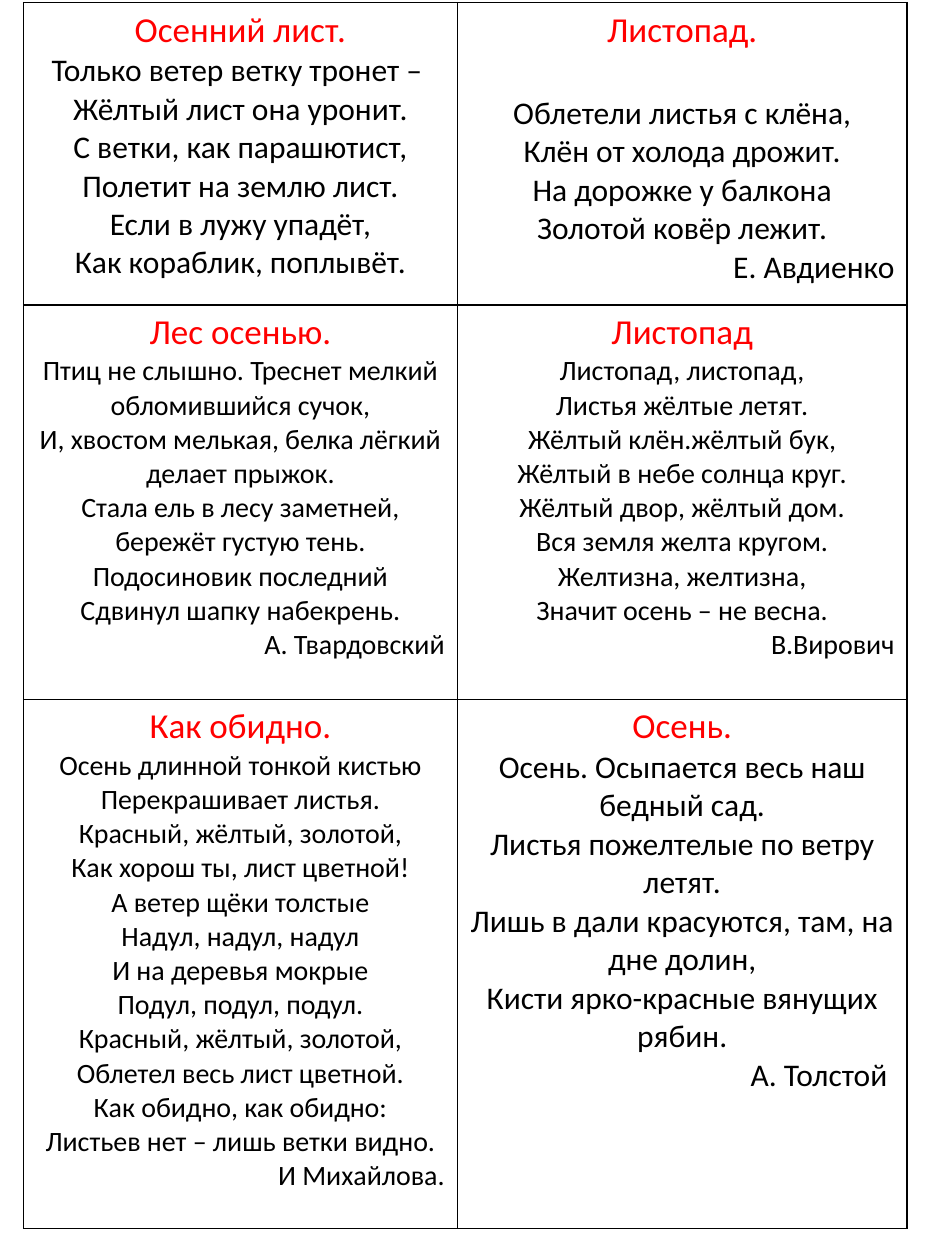
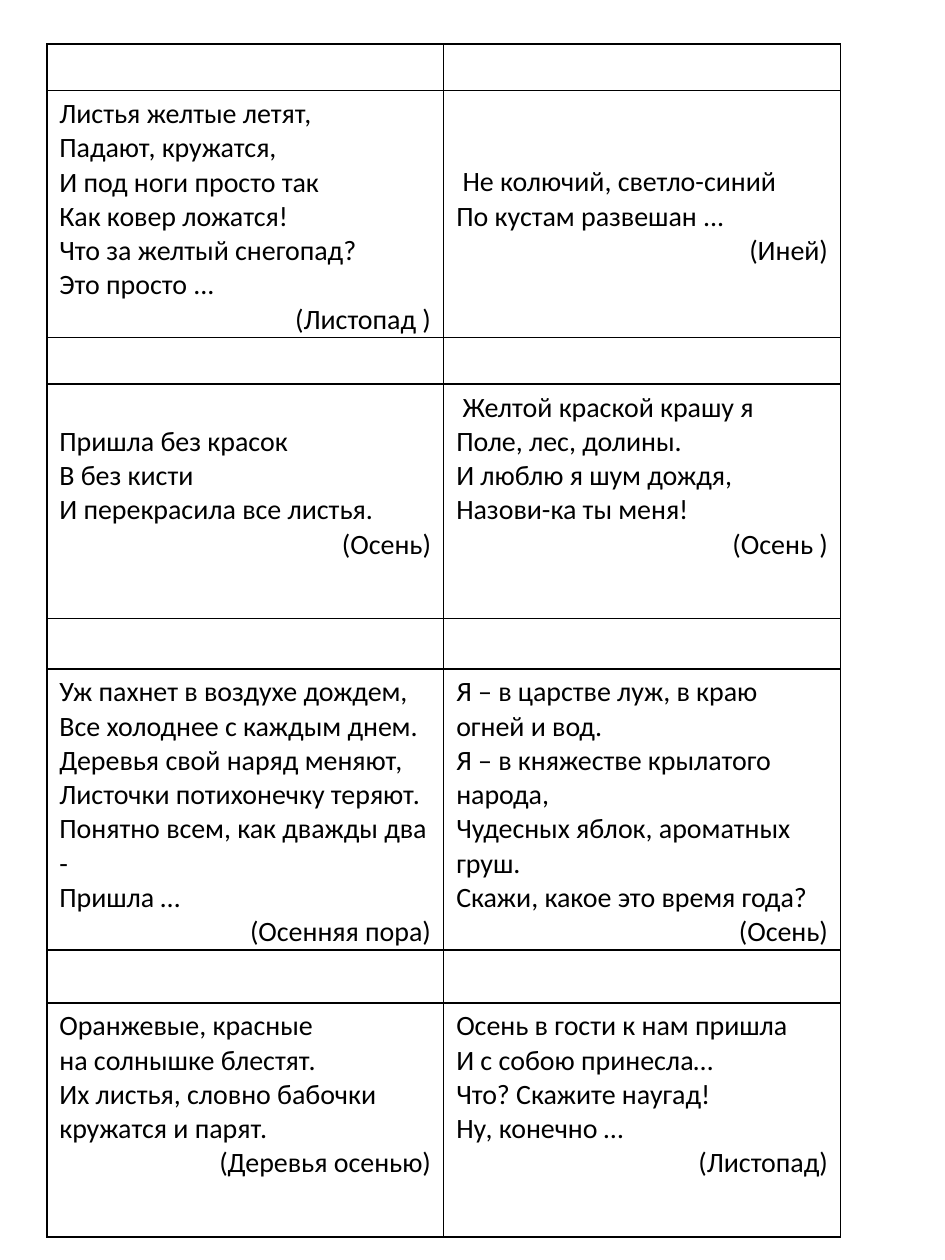
from dataclasses import dataclass

from lxml import etree
from pptx import Presentation
from pptx.dml.color import RGBColor
from pptx.enum.text import PP_ALIGN
from pptx.oxml.ns import qn
from pptx.util import Inches, Pt

LEFT, CENTER, RIGHT = PP_ALIGN.LEFT, PP_ALIGN.CENTER, PP_ALIGN.RIGHT
SLIDE_WIDTH, SLIDE_HEIGHT = Inches(7.5), Inches(10)
FONT = "Calibri"
INK, TITLE_RED = "000000", "FF0000"
TITLE_SIZE, RIDDLE_SIZE = 20, 16
LINE_SPACING = 1.22
BORDER_WIDTH = Pt(1)
CELL_TOP = Inches(0.05)


@dataclass
class Card:
    verse: str = ""
    signature: str = ""
    title: str = ""
    size: int = RIDDLE_SIZE
    title_gap: float = 0
    lines_down: int = 0


POEMS = [
    [
        Card(
            "Только ветер ветку тронет – \n"
            "Жёлтый лист она уронит.\n"
            "С ветки, как парашютист,\n"
            "Полетит на землю лист.\n"
            "Если в лужу упадёт,\n"
            "Как кораблик, поплывёт.",
            title="Осенний лист.", size=18,
        ),
        Card(
            "Облетели листья с клёна,\n"
            "Клён от холода дрожит.\n"
            "На дорожке у балкона\n"
            "Золотой ковёр лежит.",
            "Е. Авдиенко", "Листопад.", 18, title_gap=24.4,
        ),
    ],
    [
        Card(
            "Птиц не слышно. Треснет мелкий обломившийся сучок,\n"
            "И, хвостом мелькая, белка лёгкий делает прыжок.\n"
            "Стала ель в лесу заметней, бережёт густую тень.\n"
            "Подосиновик последний\n"
            "Сдвинул шапку набекрень.",
            "А. Твардовский", "Лес осенью.",
        ),
        Card(
            "Листопад, листопад,\n"
            "Листья жёлтые летят.\n"
            "Жёлтый клён.жёлтый бук,\n"
            "Жёлтый в небе солнца круг.\n"
            "Жёлтый двор, жёлтый дом.\n"
            "Вся земля желта кругом.\n"
            "Желтизна, желтизна,\n"
            "Значит осень – не весна.",
            "В.Вирович", "Листопад",
        ),
    ],
    [
        Card(
            "Осень длинной тонкой кистью\n"
            "Перекрашивает листья.\n"
            "Красный, жёлтый, золотой,\n"
            "Как хорош ты, лист цветной!\n"
            "А ветер щёки толстые\n"
            "Надул, надул, надул\n"
            "И на деревья мокрые\n"
            "Подул, подул, подул.\n"
            "Красный, жёлтый, золотой,\n"
            "Облетел весь лист цветной.\n"
            "Как обидно, как обидно:\n"
            "Листьев нет – лишь ветки видно.",
            "И Михайлова.", "Как обидно.",
        ),
        Card(
            "Осень. Осыпается весь наш бедный сад.\n"
            "Листья пожелтелые по ветру летят.\n"
            "Лишь в дали красуются, там, на дне долин,\n"
            "Кисти ярко-красные вянущих рябин.",
            "А. Толстой ", "Осень.", 18,
        ),
    ],
]

RIDDLES = [
    [
        Card(
            "Листья желтые летят,\n"
            "Падают, кружатся,\n"
            "И под ноги просто так\n"
            "Как ковер ложатся!\n"
            "Что за желтый снегопад?\n"
            "Это просто ...",
            "(Листопад )",
        ),
        Card(
            " Не колючий, светло-синий\n"
            "По кустам развешан ...",
            "(Иней)", lines_down=2,
        ),
    ],
    [
        Card(
            "Пришла без красок\n"
            "B без кисти\n"
            "И перекрасила все листья.",
            "(Осень)", lines_down=1,
        ),
        Card(
            " Желтой краской крашу я\n"
            "Поле, лес, долины.\n"
            "И люблю я шум дождя,\n"
            "Назови-ка ты меня!",
            " (Осень )",
        ),
    ],
    [
        Card(
            "Уж пахнет в воздухе дождем,\n"
            "Все холоднее с каждым днем.\n"
            "Деревья свой наряд меняют,\n"
            "Листочки потихонечку теряют.\n"
            "Понятно всем, как дважды два -\n"
            "Пришла …",
            "(Осенняя пора)",
        ),
        Card(
            "Я – в царстве луж, в краю огней и вод.\n"
            "Я – в княжестве крылатого народа,\n"
            "Чудесных яблок, ароматных груш.\n"
            "Скажи, какое это время года?",
            "(Осень)",
        ),
    ],
    [
        Card(
            "Оранжевые, красные\n"
            "на солнышке блестят.\n"
            "Их листья, словно бабочки\n"
            "кружатся и парят.",
            "(Деревья осенью)",
        ),
        Card(
            "Осень в гости к нам пришла\n"
            "И с собою принесла…\n"
            "Что? Скажите наугад!\n"
            "Ну, конечно …",
            "(Листопад)",
        ),
    ],
]


def color(value):
    return RGBColor.from_string(value)


def across(percent):
    return int(SLIDE_WIDTH * percent / 100)


def down(percent):
    return int(SLIDE_HEIGHT * percent / 100)


def apply_format(target, values):
    for name, value in values.items():
        setattr(target, name, value)


def outline_cell(cell):
    properties = cell._tc.get_or_add_tcPr()
    for side in ("a:lnL", "a:lnR", "a:lnT", "a:lnB"):
        border = etree.SubElement(properties, qn(side), w=str(BORDER_WIDTH))
        fill = etree.SubElement(border, qn("a:solidFill"))
        etree.SubElement(fill, qn("a:srgbClr"), val=INK)
    cell.fill.background()


def card_lines(card, verse_align):
    if card.title:
        yield card.title, TITLE_SIZE, TITLE_RED, CENTER
    for line in card.verse.splitlines():
        yield line, card.size, INK, verse_align
    if card.signature:
        yield card.signature, card.size, INK, RIGHT


def write_card(cell, card, verse_align):
    frame = cell.text_frame
    for index, (line, size, ink, align) in enumerate(card_lines(card, verse_align)):
        paragraph = frame.add_paragraph() if index else frame.paragraphs[0]
        paragraph.alignment = align
        if index == 1 and card.title_gap:
            paragraph.space_before = Pt(card.title_gap)
        run = paragraph.add_run()
        run.text = line
        apply_format(run.font, {"name": FONT, "size": Pt(size)})
        run.font.color.rgb = color(ink)


def add_card_table(slide, corner, columns, rows, cards, verse_align):
    left, top = corner
    table = slide.shapes.add_table(
        len(rows), len(columns), across(left), down(top),
        across(sum(columns)), down(sum(rows)),
    ).table
    apply_format(table, {"first_row": False, "horz_banding": False})
    for column, share in zip(table.columns, columns):
        column.width = across(share)
    for row, share, row_cards in zip(table.rows, rows, cards):
        row.height = down(share)
        for cell, card in zip(row.cells, row_cards):
            offset = Pt(card.lines_down * card.size * LINE_SPACING)
            apply_format(cell, {"margin_top": CELL_TOP + offset, "margin_bottom": 0})
            outline_cell(cell)
            write_card(cell, card, verse_align)


def with_spacer_rows(cards):
    return [row for pair in cards for row in ([Card(), Card()], pair)]


def main():
    deck = Presentation()
    apply_format(deck, {"slide_width": SLIDE_WIDTH, "slide_height": SLIDE_HEIGHT})
    blank = deck.slide_layouts[6]
    add_card_table(
        deck.slides.add_slide(blank), (2.5, 0.2), (45.9, 47.6),
        (24, 31.3, 42), POEMS, CENTER,
    )
    add_card_table(
        deck.slides.add_slide(blank), (4.95, 3.5), (42, 42),
        (3.7, 19.6, 3.7, 18.6, 4, 22.3, 4.2, 18.6),
        with_spacer_rows(RIDDLES), LEFT,
    )
    deck.save("out.pptx")


if __name__ == "__main__":
    main()
